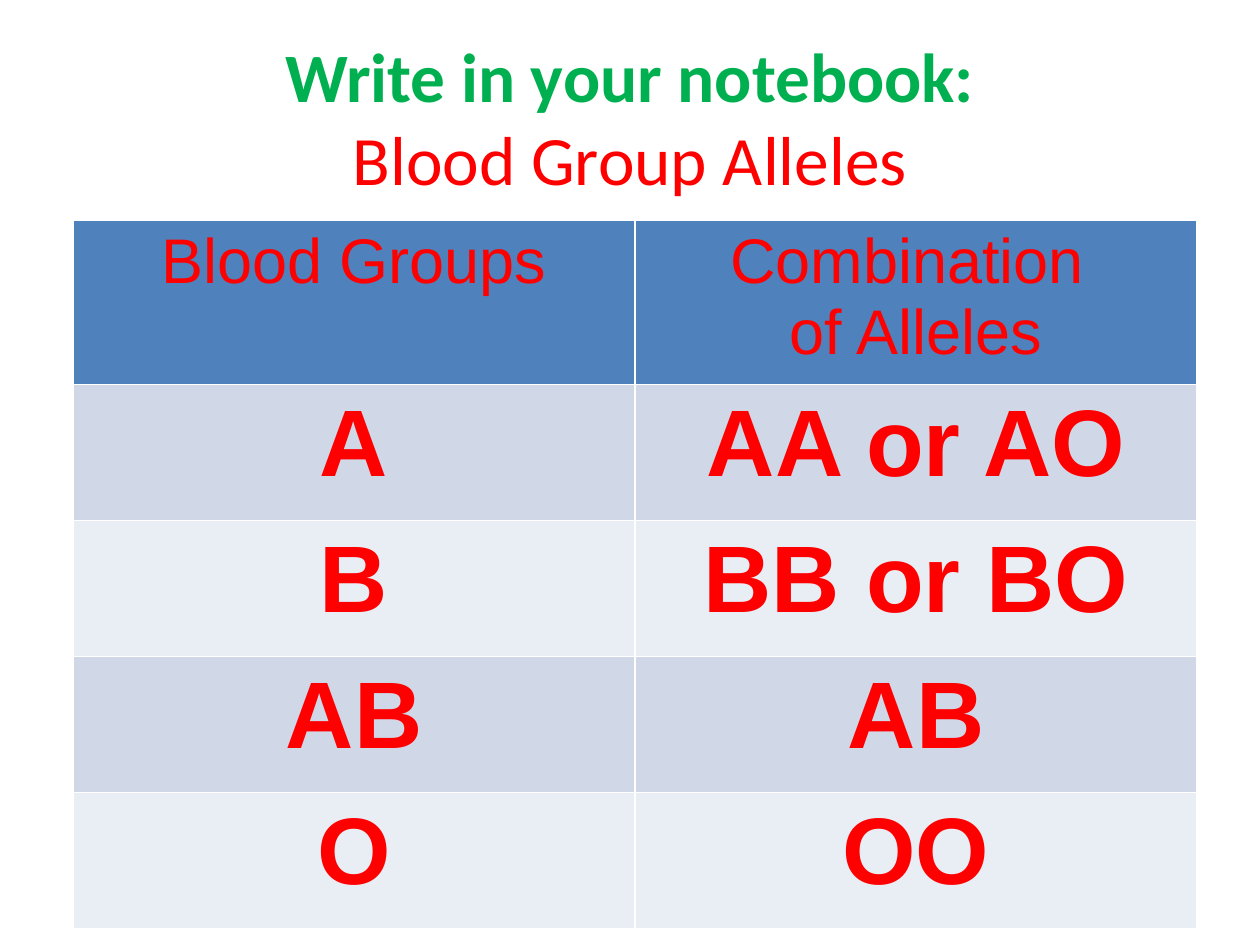
from pptx import Presentation
from pptx.dml.color import RGBColor
from pptx.enum import text
from pptx.util import Inches, Pt

RED, GREEN = "FF0000", "00B050"
HEAD, BANDS = "4F81BD", ("E9EDF4", "D0D8E8")
ROWS = [
    ("Blood Groups", "Combination \nof Alleles"),
    ("A", "AA or AO"),
    ("B", "BB or BO"),
    ("AB", "AB"),
    ("O", "OO"),
]


def color(code):
    return RGBColor.from_string(code)


def style(run, font, size, code, bold):
    run.font.name = font
    run.font.size = Pt(size)
    run.font.bold = bold
    run.font.color.rgb = color(code)


def add_title(slide):
    box = slide.shapes.add_textbox(Inches(0.5), Inches(0.3), Inches(9), Inches(1.25))
    frame = box.text_frame
    frame.word_wrap = True
    frame.vertical_anchor = text.MSO_ANCHOR.MIDDLE
    para = frame.paragraphs[0]
    para.text = "Write in your notebook:\vBlood Group Alleles"
    para.alignment = text.PP_ALIGN.CENTER
    top, sub = para.runs
    style(top, "Calibri", 39.6, GREEN, True)
    style(sub, "Calibri", 39.6, RED, False)


def fill_cell(cell, words, back, size, bold):
    cell.fill.solid()
    cell.fill.fore_color.rgb = color(back)
    cell.text_frame.text = words
    for para in cell.text_frame.paragraphs:
        para.alignment = text.PP_ALIGN.CENTER
        for run in para.runs:
            style(run, "Arial", size, RED, bold)


def add_groups(slide):
    """Table of blood groups; its white borders come from the table style."""
    high = Inches(1.08)
    frame = slide.shapes.add_table(len(ROWS), 2, Inches(0.58), Inches(1.75),
                                   Inches(8.92), high * len(ROWS))
    for i, row in enumerate(ROWS):
        frame.table.rows[i].height = high
        look = (BANDS[i % 2], 54, True) if i else (HEAD, 36, False)
        for j, words in enumerate(row):
            fill_cell(frame.table.cell(i, j), words, *look)


def main():
    deck = Presentation()
    deck.slide_width, deck.slide_height = Inches(10), Inches(7.5)
    slide = deck.slides.add_slide(deck.slide_layouts[6])
    add_title(slide)
    add_groups(slide)
    deck.save("out.pptx")


if __name__ == "__main__":
    main()
